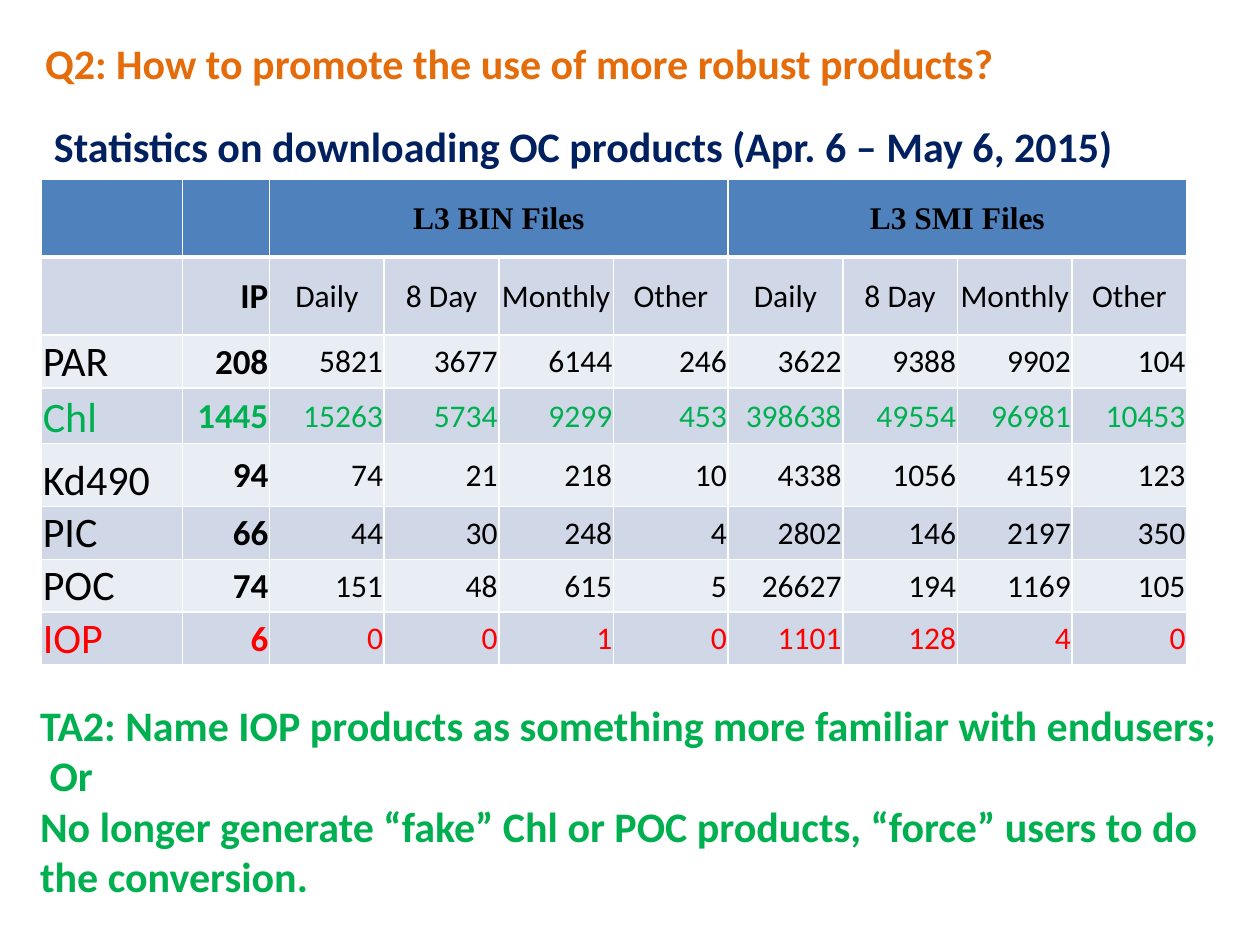
from lxml import etree
from pptx import Presentation
from pptx.dml.color import RGBColor
from pptx.enum.text import MSO_ANCHOR, MSO_AUTO_SIZE, PP_ALIGN
from pptx.oxml.ns import qn
from pptx.util import Inches, Pt

LEFT, CENTER, RIGHT = PP_ALIGN.LEFT, PP_ALIGN.CENTER, PP_ALIGN.RIGHT
MIDDLE, BOTTOM = MSO_ANCHOR.MIDDLE, MSO_ANCHOR.BOTTOM
FIT_SHAPE = MSO_AUTO_SIZE.SHAPE_TO_FIT_TEXT

BLACK, WHITE, GREEN, RED = "000000", "FFFFFF", "00B050", "FF0000"
ORANGE, NAVY = "E46C0A", "002060"
HEADER_FILL, DARK_BAND, LIGHT_BAND = "4F81BD", "D0D8E8", "E9EDF4"

COLUMN_WIDTHS = [1.12, 0.69] + [0.91] * 8
ROW_HEIGHTS = [0.62, 0.62, 0.42, 0.44, 0.5, 0.42, 0.42, 0.42]
FILE_GROUPS = {2: "L3 BIN Files", 6: "L3 SMI Files"}
PERIODS = ["Daily", "8 Day", "Monthly", "Other"]
DOWNLOADS = [
    ("PAR", 208, 5821, 3677, 6144, 246, 3622, 9388, 9902, 104),
    ("Chl", 1445, 15263, 5734, 9299, 453, 398638, 49554, 96981, 10453),
    ("Kd490", 94, 74, 21, 218, 10, 4338, 1056, 4159, 123),
    ("PIC", 66, 44, 30, 248, 4, 2802, 146, 2197, 350),
    ("POC", 74, 151, 48, 615, 5, 26627, 194, 1169, 105),
    ("IOP", 6, 0, 0, 1, 0, 1101, 128, 4, 0),
]
ROW_COLORS = {"Chl": GREEN, "IOP": RED}


def rgb(value):
    return RGBColor.from_string(value)


def write_text(para, text, size=18, color=BLACK, bold=False, font="Calibri", align=LEFT):
    para.text = text
    para.alignment = align
    for span in para.runs:
        span.font.size = Pt(size)
        span.font.color.rgb = rgb(color)
        span.font.bold = bold
        span.font.name = font


def add_text_box(page, position, paragraphs, color, wrap=False):
    box = page.shapes.add_textbox(*[Inches(value) for value in position])
    frame = box.text_frame
    frame.word_wrap = wrap
    frame.auto_size = FIT_SHAPE
    for index, text in enumerate(paragraphs):
        para = frame.add_paragraph() if index else frame.paragraphs[0]
        write_text(para, text, size=24, color=color, bold=True)


def set_borders(cell, bottom_width):
    properties = cell._tc.get_or_add_tcPr()
    widths = {"a:lnL": 1, "a:lnR": 1, "a:lnT": 1, "a:lnB": bottom_width}
    for tag, width in widths.items():
        line = etree.SubElement(properties, qn(tag), w=str(Pt(width)))
        fill = etree.SubElement(line, qn("a:solidFill"))
        etree.SubElement(fill, qn("a:srgbClr"), val=WHITE)


def style_cell(cell, row):
    set_borders(cell, 3 if row == 0 else 1)
    cell.fill.solid()
    band = DARK_BAND if row % 2 else LIGHT_BAND
    cell.fill.fore_color.rgb = rgb(band if row else HEADER_FILL)
    cell.margin_left = cell.margin_right = cell.margin_top = Inches(0.01)
    cell.margin_bottom = 0


def write_cell(cell, text, anchor=MIDDLE, **style):
    cell.vertical_anchor = anchor
    write_text(cell.text_frame.paragraphs[0], text, **style)


def fill_headers(table):
    for column, title in FILE_GROUPS.items():
        cell = table.cell(0, column)
        cell.merge(table.cell(0, column + len(PERIODS) - 1))
        write_cell(cell, title, bold=True, font="Times New Roman", align=CENTER)
        for offset, period in enumerate(PERIODS):
            write_cell(table.cell(1, column + offset), period, align=CENTER)
    write_cell(table.cell(1, 1), "IP", size=20, bold=True, align=RIGHT)


def fill_downloads(table):
    for row, (product, visitors, *counts) in enumerate(DOWNLOADS, start=2):
        color = ROW_COLORS.get(product, BLACK)
        write_cell(table.cell(row, 0), product, anchor=BOTTOM, size=24, color=color)
        write_cell(table.cell(row, 1), str(visitors), size=20, color=color,
                   bold=True, align=RIGHT)
        for column, count in enumerate(counts, start=2):
            write_cell(table.cell(row, column), str(count), color=color, align=RIGHT)


def add_download_table(page):
    table = page.shapes.add_table(
        len(ROW_HEIGHTS), len(COLUMN_WIDTHS), Inches(0.33), Inches(1.42),
        Inches(sum(COLUMN_WIDTHS)), Inches(sum(ROW_HEIGHTS))).table
    for column, width in zip(table.columns, COLUMN_WIDTHS):
        column.width = Inches(width)
    for index, (row, height) in enumerate(zip(table.rows, ROW_HEIGHTS)):
        row.height = Inches(height)
        for cell in row.cells:
            style_cell(cell, index)
    fill_headers(table)
    fill_downloads(table)


def main():
    deck = Presentation()
    deck.slide_width, deck.slide_height = Inches(10), Inches(7.5)
    page = deck.slides.add_slide(deck.slide_layouts[6])
    add_text_box(page, (0.33, 0.91, 8.69, 0.5),
                 ["Statistics on downloading OC products (Apr. 6 – May 6, 2015)"], NAVY)
    add_download_table(page)
    add_text_box(page, (0.26, 0.25, 7.8, 0.5),
                 ["Q2: How to promote the use of more robust products?"], ORANGE)
    add_text_box(page, (0.22, 5.5, 9.56, 1.72), [
        "TA2: Name IOP products as something more familiar with endusers;\v Or",
        "No longer generate “fake” Chl or POC products, “force” users to do the conversion.",
    ], GREEN, wrap=True)
    deck.save("out.pptx")


if __name__ == "__main__":
    main()
